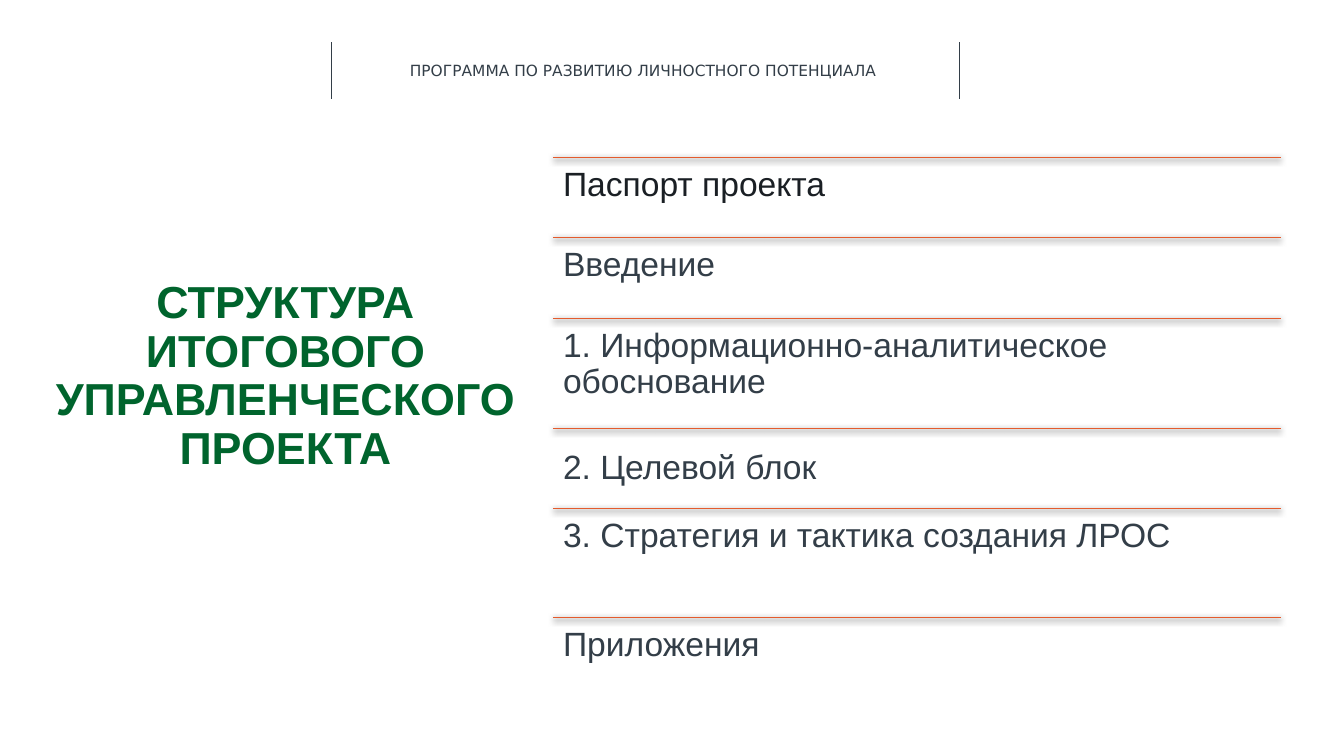
from lxml import etree
from pptx import Presentation
from pptx.dml.color import RGBColor
from pptx.enum.shapes import MSO_CONNECTOR
from pptx.enum.text import PP_ALIGN
from pptx.oxml.ns import qn
from pptx.util import Cm, Pt

STRAIGHT = MSO_CONNECTOR.STRAIGHT
LEFT, CENTER = PP_ALIGN.LEFT, PP_ALIGN.CENTER

COLORS = {
    "slate": "333E48",
    "green": "00642D",
    "orange": "E45B2D",
    "ink": "1A1F24",
    "shadow": "000000",
}

LIST_LEFT, LIST_TOP, LIST_WIDTH = 13.94, 3.96, 18.34
SECTIONS = [
    ("Паспорт проекта", 2.03, 0, "ink"),
    ("Введение", 2.03, 0, "slate"),
    ("1. Информационно-аналитическое обоснование", 2.77, 0, "slate"),
    ("2. Целевой блок", 2.03, 0.3, "slate"),
    ("3. Стратегия и тактика создания ЛРОС", 2.74, 0, "slate"),
    ("Приложения", 2.03, 0, "slate"),
]


def add_text(s, text, left, top, width, height, size=24, font="Arial",
             color="slate", bold=False, align=LEFT, spacing=0.9, inset_y=0.25):
    sp = s.shapes.add_textbox(Cm(left), Cm(top), Cm(width), Cm(height))
    tf = sp.text_frame
    tf.word_wrap = True
    tf.margin_left = tf.margin_right = Cm(0.25)
    tf.margin_top = tf.margin_bottom = Cm(inset_y)
    p = tf.paragraphs[0]
    p.alignment = align
    p.line_spacing = spacing
    r = p.add_run()
    r.text = text
    r.font.size = Pt(size)
    r.font.name = font
    r.font.bold = bold
    r.font.color.rgb = RGBColor.from_string(COLORS[color])


def add_line(s, x1, y1, x2, y2, color, shadow=False):
    line = s.shapes.add_connector(STRAIGHT, Cm(x1), Cm(y1), Cm(x2), Cm(y2))
    line.line.width = Pt(0.75)
    line.line.color.rgb = RGBColor.from_string(COLORS[color])
    effects = etree.SubElement(line._element.spPr, qn("a:effectLst"))
    if shadow:
        outer = etree.SubElement(
            effects, qn("a:outerShdw"), blurRad=str(Pt(4.5)),
            dist=str(Pt(1.5)), dir="5400000", algn="ctr", rotWithShape="0")
        clr = etree.SubElement(outer, qn("a:srgbClr"), val=COLORS["shadow"])
        etree.SubElement(clr, qn("a:alpha"), val="63000")


def add_header(s):
    for x in (8.36, 24.18):
        add_line(s, x, 1.07, x, 2.49, "slate")
    add_text(s, "ПРОГРАММА ПО РАЗВИТИЮ ЛИЧНОСТНОГО ПОТЕНЦИАЛА",
             10.08, 1.42, 12.37, 0.74, size=11, font="DejaVu Sans",
             spacing=1.0, inset_y=0.13)


def add_sections(s):
    top = LIST_TOP
    for text, height, offset, color in SECTIONS:
        add_line(s, LIST_LEFT, top, LIST_LEFT + LIST_WIDTH, top, "orange", shadow=True)
        add_text(s, text, LIST_LEFT, top + offset, LIST_WIDTH, height, color=color)
        top += height


def main():
    prs = Presentation()
    prs.slide_width, prs.slide_height = Cm(33.87), Cm(19.05)
    s = prs.slides.add_slide(prs.slide_layouts[6])
    add_header(s)
    add_text(s, "СТРУКТУРА ИТОГОВОГО УПРАВЛЕНЧЕСКОГО ПРОЕКТА",
             0.36, 6.93, 13.67, 5.18, size=32, color="green", bold=True,
             align=CENTER, inset_y=0.13)
    add_sections(s)
    prs.save("out.pptx")


if __name__ == "__main__":
    main()
